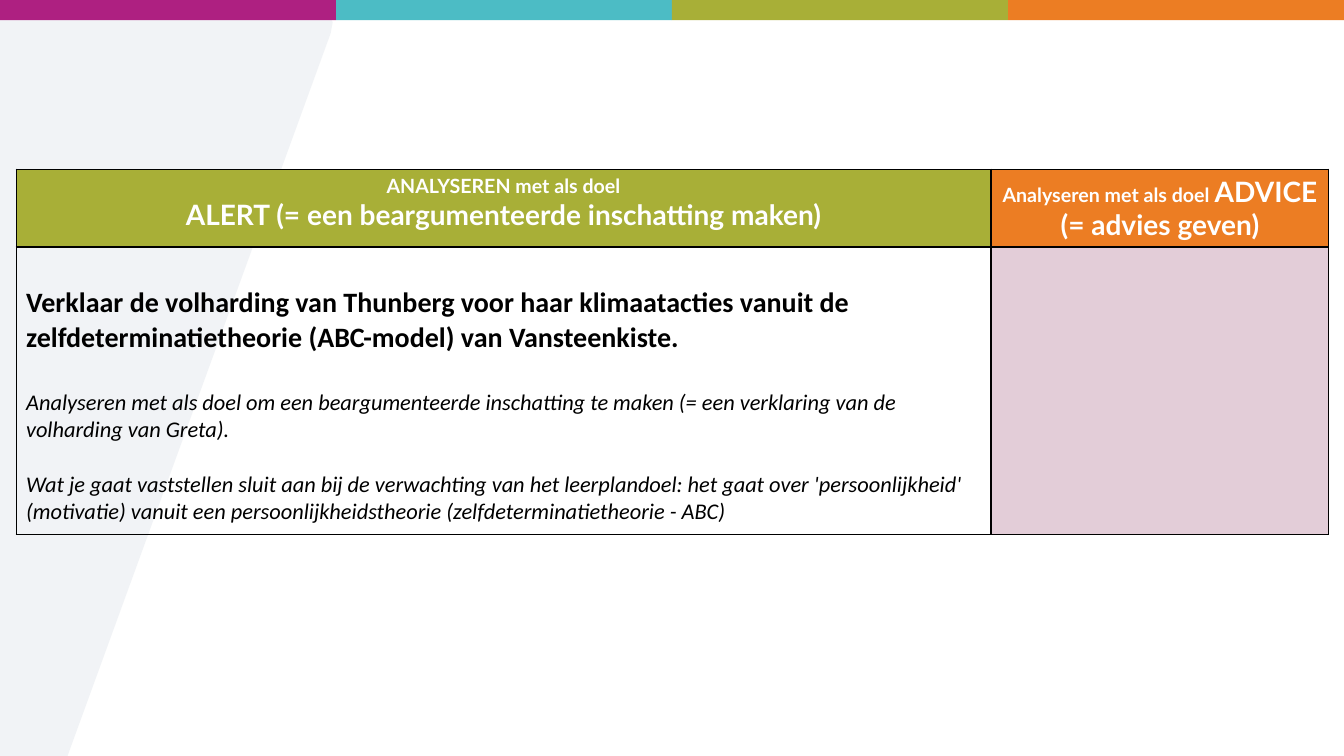
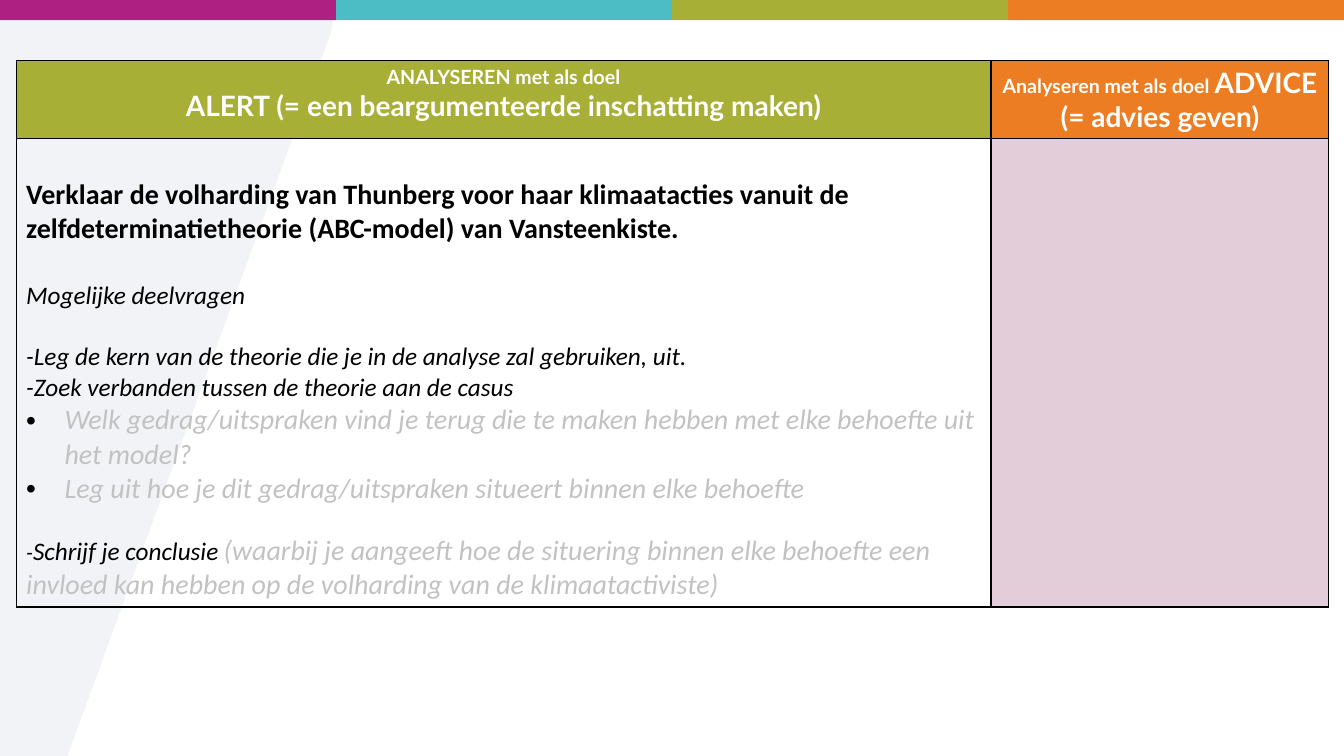
from lxml import etree
from pptx import Presentation
from pptx.dml.color import RGBColor
from pptx.enum.shapes import MSO_SHAPE
from pptx.enum.text import PP_ALIGN
from pptx.oxml.ns import qn
from pptx.util import Inches, Pt

RECTANGLE = MSO_SHAPE.RECTANGLE
CENTER, LEFT = PP_ALIGN.CENTER, PP_ALIGN.LEFT

MAGENTA, TEAL, GREEN, ORANGE = "AE2081", "4CBCC5", "A8AF37", "EC7D23"
PALE, PINK, GREY, BLACK, WHITE = "E8ECF0", "E3CDD8", "C2C2C2", "000000", "FFFFFF"
PLAIN_TABLE = "{2D5ABB26-0587-4C30-8999-92F81FD0307C}"
WIDTH, HEIGHT = 13.33, 7.5
BAND_HEIGHT = 0.2
COLUMN_WIDTHS = (9.67, 3.35)
HEADER_HEIGHT = 0.77

HEADER = dict(name="Lato", bold=True, colour=WHITE, align=CENTER)
QUESTION = dict(name="Calibri", bold=True, size=20)
NOTE = dict(name="Calibri", italic=True)
HINT = dict(NOTE, size=20, colour=GREY)

# Each paragraph is (text or list of (text, size, colour) runs, style)
ALERT_HEAD = [
    ("ANALYSEREN met als doel", dict(HEADER, size=14)),
    ("ALERT (= een beargumenteerde inschatting maken)", dict(HEADER, size=20)),
]
ADVICE_HEAD = [
    ([("Analyseren met als doel ", 14, WHITE), ("ADVICE (= advies geven)", 20, WHITE)], HEADER),
]
MAIN_QUESTION = (
    "Verklaar de volharding van Thunberg voor haar klimaatacties vanuit de "
    "zelfdeterminatietheorie (ABC-model) van Vansteenkiste.", QUESTION)

# Table top, body row height, body paragraphs
PAGES = [
    (1.68, 2.85, [
        MAIN_QUESTION,
        ("Analyseren met als doel om een beargumenteerde inschatting te maken "
         "(= een verklaring van de volharding van Greta).", dict(NOTE, size=16, before=24.4)),
        ("Wat je gaat vaststellen sluit aan bij de verwachting van het leerplandoel: "
         "het gaat over 'persoonlijkheid' (motivatie) vanuit een persoonlijkheidstheorie "
         "(zelfdeterminatietheorie - ABC)", dict(NOTE, size=16, before=19.5)),
    ]),
    (0.6, 4.65, [
        MAIN_QUESTION,
        ("Mogelijke deelvragen", dict(NOTE, size=18, before=24.4)),
        ("-Leg de kern van de theorie die je in de analyse zal gebruiken, uit.",
         dict(NOTE, size=18, before=22)),
        ("-Zoek verbanden tussen de theorie aan de casus", dict(NOTE, size=18)),
        ("Welk gedrag/uitspraken vind je terug die te maken hebben met elke behoefte "
         "uit het model?", dict(HINT, bullet=True)),
        ("Leg uit hoe je dit gedrag/uitspraken situeert binnen elke behoefte",
         dict(HINT, bullet=True)),
        ([("-", 16, BLACK), ("Schrijf je conclusie", 18, BLACK), (" ", 16, BLACK),
          ("(waarbij je aangeeft hoe de situering binnen elke behoefte een invloed kan "
           "hebben op de volharding van de klimaatactiviste)", 20, GREY)],
         dict(NOTE, before=19.5)),
    ]),
]


def paint(fill, colour):
    fill.solid()
    fill.fore_color.rgb = RGBColor.from_string(colour)


def write(frame, paragraphs):
    for index, (content, style) in enumerate(paragraphs):
        para = frame.add_paragraph() if index else frame.paragraphs[0]
        para.alignment = style.get("align", LEFT)
        if "before" in style:
            para.space_before = Pt(style["before"])
        if style.get("bullet"):
            props = para._p.get_or_add_pPr()
            props.set("marL", str(Inches(0.38)))
            props.set("indent", str(-Inches(0.38)))
            tint = etree.SubElement(props, qn("a:buClr"))
            etree.SubElement(tint, qn("a:srgbClr"), val=BLACK)
            etree.SubElement(props, qn("a:buFont"), typeface="Arial")
            etree.SubElement(props, qn("a:buChar"), char="•")
        para.font.name = style["name"]
        para.font.bold = style.get("bold", False)
        para.font.italic = style.get("italic", False)
        if isinstance(content, str):
            para.font.size = Pt(style["size"])
            paint(para.font.fill, style.get("colour", BLACK))
            para.add_run().text = content
            continue
        for text, size, colour in content:
            span = para.add_run()
            span.text = text
            span.font.size = Pt(size)
            paint(span.font.fill, colour)


deck = Presentation()
deck.slide_width, deck.slide_height = Inches(WIDTH), Inches(HEIGHT)

for table_top, body_height, body in PAGES:
    page = deck.slides.add_slide(deck.slide_layouts[6])

    # Pale slanted panel
    outline = page.shapes.build_freeform(0, Inches(0.05), scale=1.0)
    corners = [(3.09, 0.05), (3.25, 0.12), (3.3, 0.22), (3.28, 0.33), (0.67, HEIGHT), (0, HEIGHT)]
    outline.add_line_segments([(Inches(x), Inches(y)) for x, y in corners])
    panel = outline.convert_to_shape()
    panel.shadow.inherit = False
    panel.line.fill.background()
    paint(panel.fill, PALE)
    tone = panel._element.spPr.find(qn("a:solidFill"))[0]
    etree.SubElement(tone, qn("a:alpha"), val="59000")

    # Colour band along the top
    for index, colour in enumerate((MAGENTA, TEAL, GREEN, ORANGE)):
        band = page.shapes.add_shape(RECTANGLE, Inches(index * WIDTH / 4), 0,
                                     Inches(WIDTH / 4), Inches(BAND_HEIGHT))
        band.shadow.inherit = False
        band.line.fill.background()
        paint(band.fill, colour)

    # Table
    frame = page.shapes.add_table(2, 2, Inches(0.16), Inches(table_top),
                                  Inches(sum(COLUMN_WIDTHS)), Inches(HEADER_HEIGHT + body_height))
    table = frame.table
    table.first_row = table.horz_banding = False
    table._tbl.tblPr.find(qn("a:tableStyleId")).text = PLAIN_TABLE
    for column, width in zip(table.columns, COLUMN_WIDTHS):
        column.width = Inches(width)
    for row, height in zip(table.rows, (HEADER_HEIGHT, body_height)):
        row.height = Inches(height)

    fills = (GREEN, ORANGE, None, PINK)
    for cell, colour, paragraphs in zip(table.iter_cells(), fills, (ALERT_HEAD, ADVICE_HEAD, body, [])):
        props = cell._tc.get_or_add_tcPr()
        for side in ("a:lnL", "a:lnR", "a:lnT", "a:lnB"):
            border = etree.SubElement(props, qn(side), w=str(Pt(1)))
            ink = etree.SubElement(border, qn("a:solidFill"))
            etree.SubElement(ink, qn("a:srgbClr"), val=BLACK)
        if colour:
            paint(cell.fill, colour)
        else:
            cell.fill.background()
        write(cell.text_frame, paragraphs)
    table.cell(1, 0).margin_top = Inches(0.39)

deck.save("out.pptx")
